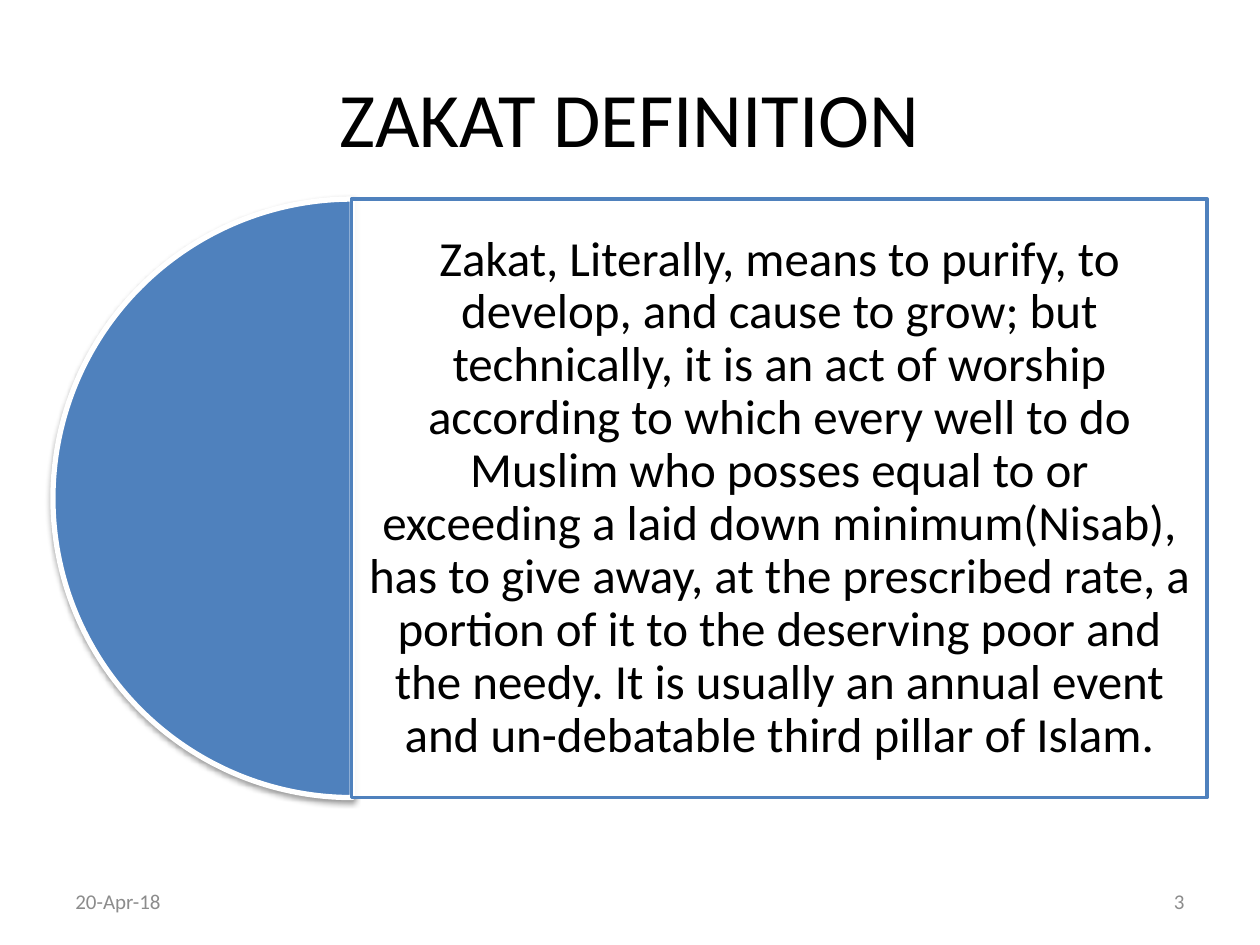
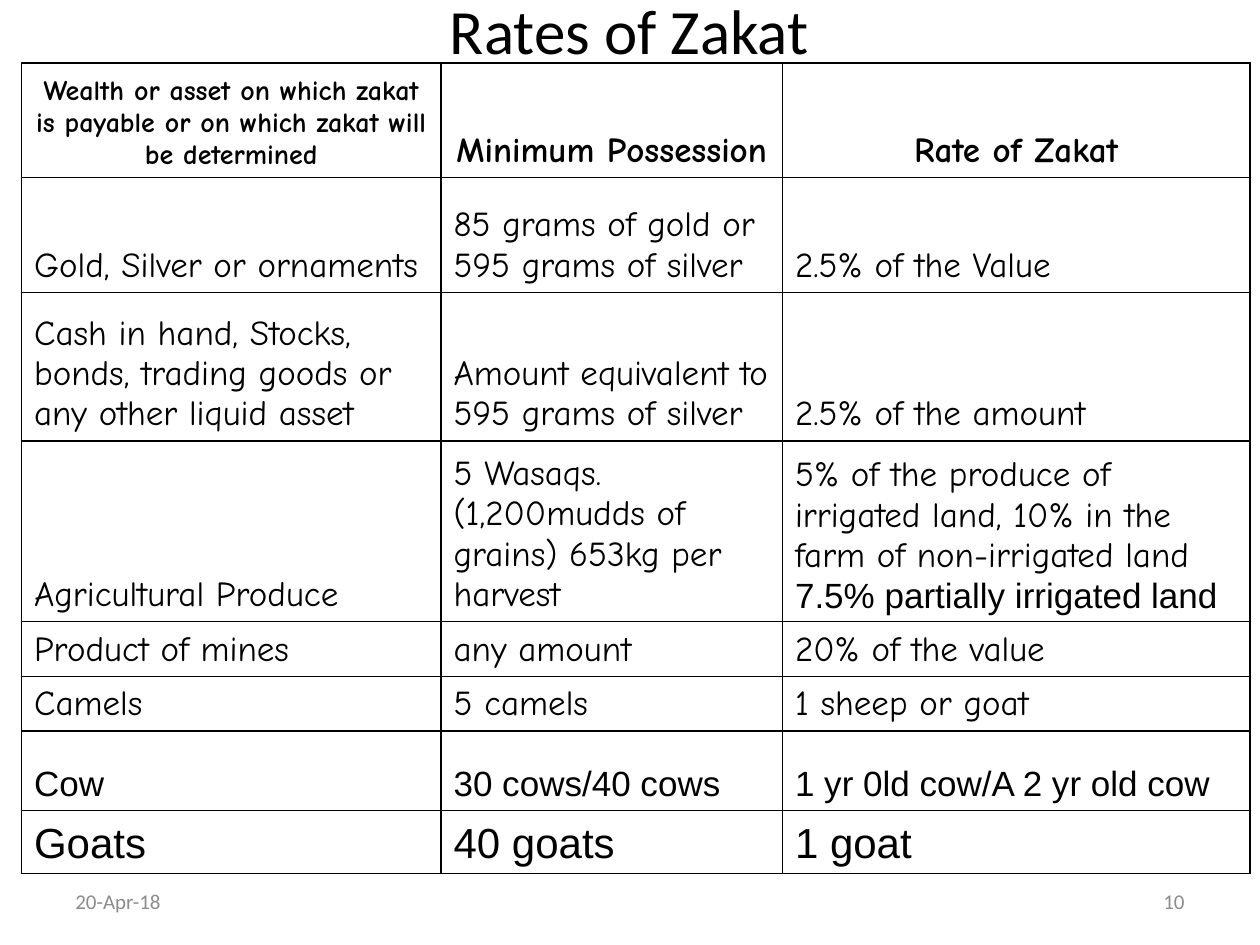
from lxml import etree
from pptx import Presentation
from pptx.dml.color import RGBColor
from pptx.enum.shapes import MSO_SHAPE
from pptx.enum.text import MSO_ANCHOR, PP_ALIGN
from pptx.oxml import parse_xml
from pptx.oxml.ns import nsdecls, qn
from pptx.util import Pt

PX = 9144  # 100 px to the inch
BLACK = RGBColor(0x00, 0x00, 0x00)
WHITE = RGBColor(0xFF, 0xFF, 0xFF)
BLUE = RGBColor(0x4F, 0x81, 0xBD)
GREY = RGBColor(0x8C, 0x8C, 0x8C)
BODY, HAND, PLAIN = "Calibri", "Comic Neue", "Arial"
LEFT, CENTER, RIGHT = PP_ALIGN.LEFT, PP_ALIGN.CENTER, PP_ALIGN.RIGHT
MIDDLE, BOTTOM = MSO_ANCHOR.MIDDLE, MSO_ANCHOR.BOTTOM
PIE, RECTANGLE = MSO_SHAPE.PIE, MSO_SHAPE.RECTANGLE


def style(paragraph, size, font=BODY, color=BLACK, align=LEFT, bold=False):
    paragraph.alignment = align
    paragraph.font.size = Pt(size)
    paragraph.font.name = font
    paragraph.font.color.rgb = color
    paragraph.font.bold = bold


def add_text(slide, box, text, size, color=BLACK, align=LEFT):
    frame = slide.shapes.add_textbox(*[PX * length for length in box]).text_frame
    frame.word_wrap = True
    frame.vertical_anchor = MIDDLE
    frame.text = text
    style(frame.paragraphs[0], size, color=color, align=align)


presentation = Presentation()
presentation.slide_width = 1000 * PX
presentation.slide_height = 750 * PX
blank = presentation.slide_layouts[6]

# Titles and footers of both slides
slides = []
for title, title_box, title_size, number in [
    ("ZAKAT DEFINITION", (50, 30, 900, 125), 44, "3"),
    ("Rates of Zakat", (58, 13, 883, 20), 36, "10"),
]:
    slide = presentation.slides.add_slide(blank)
    add_text(slide, title_box, title, title_size, align=CENTER)
    add_text(slide, (50, 695, 233, 40), "20-Apr-18", 12, GREY)
    add_text(slide, (717, 695, 233, 40), number, 12, GREY, RIGHT)
    slides.append(slide)
definition_slide, rates_slide = slides

# Half disc with a soft shadow
disc = definition_slide.shapes.add_shape(PIE, 42 * PX, 158 * PX, 475 * PX, 475 * PX)
disc.adjustments[0], disc.adjustments[1] = 54, 162
disc.fill.solid()
disc.fill.fore_color.rgb = BLUE
disc.line.color.rgb = WHITE
disc.line.width = Pt(3)
disc.shadow.inherit = False
disc._element.spPr.find(qn("a:effectLst")).append(parse_xml(
    f'<a:outerShdw {nsdecls("a")} blurRad="39400" dist="20300" dir="5400000" rotWithShape="0">'
    '<a:srgbClr val="000000"><a:alpha val="38000"/></a:srgbClr></a:outerShdw>'))

# Definition panel
panel = definition_slide.shapes.add_shape(RECTANGLE, 279 * PX, 158 * PX, 679 * PX, 475 * PX)
panel.shadow.inherit = False
panel.fill.solid()
panel.fill.fore_color.rgb = WHITE
panel_color = panel._element.spPr.find(qn("a:solidFill")).find(qn("a:srgbClr"))
etree.SubElement(panel_color, qn("a:alpha"), val="90000")
panel.line.color.rgb = BLUE
panel.line.width = Pt(2)
frame = panel.text_frame
frame.word_wrap = True
frame.vertical_anchor = MIDDLE
frame.margin_left = frame.margin_right = frame.margin_top = frame.margin_bottom = 12 * PX
frame.text = (
    "Zakat, Literally, means to purify, to develop, and cause to grow; but technically, "
    "it is an act of worship according to which every well to do Muslim who posses equal "
    "to or exceeding a laid down minimum(Nisab), has to give away, at the prescribed rate, "
    "a portion of it to the deserving poor and the needy. It is usually an annual event "
    "and un-debatable third pillar of Islam.")
style(frame.paragraphs[0], 28, align=CENTER)
frame.paragraphs[0].line_spacing = 0.9

# Rates table: row height, font, size, cell texts
column_widths = [333, 271, 371]
rates = [
    (91, HAND, 20, ["Wealth or asset on which zakat is payable or on which zakat will be determined",
                    "Minimum Possession", "Rate of Zakat"]),
    (91, HAND, 20, ["Gold, Silver or ornaments", "85 grams of gold or 595 grams of silver",
                    "2.5% of the Value"]),
    (118, HAND, 20, ["Cash in hand, Stocks, bonds, trading goods or any other liquid asset",
                     "Amount equivalent to 595 grams of silver", "2.5% of the amount"]),
    (138, HAND, 20, ["Agricultural Produce", "5 Wasaqs. (1,200mudds of grains) 653kg per harvest",
                     "5% of the produce of irrigated land, 10% in the farm of non-irrigated land\n"
                     "7.5% partially irrigated land"]),
    (42, HAND, 20, ["Product of mines", "any amount", "20% of the value"]),
    (42, HAND, 20, ["Camels", "5 camels", "1 sheep or goat"]),
    (63, PLAIN, 20, ["Cow", "30 cows/40 cows", "1 yr 0ld cow/A 2 yr old cow"]),
    (48, PLAIN, 24, ["Goats", "40 goats", "1 goat"]),
]
table = rates_slide.shapes.add_table(
    len(rates), len(column_widths), 17 * PX, 50 * PX,
    sum(column_widths) * PX, sum(rate[0] for rate in rates) * PX).table
table.first_row = table.horz_banding = False
for column, width in zip(table.columns, column_widths):
    column.width = width * PX

for row_index, (height, font, size, texts) in enumerate(rates):
    table.rows[row_index].height = height * PX
    header = row_index == 0
    for column_index, text in enumerate(texts):
        cell = table.cell(row_index, column_index)
        cell.text = text
        cell.vertical_anchor = BOTTOM
        for paragraph in cell.text_frame.paragraphs:
            style(paragraph, size, font, align=CENTER if header else LEFT, bold=header)
        # Borders stand before the fill in the cell properties
        properties = cell._tc.get_or_add_tcPr()
        for side in ("lnL", "lnR", "lnT", "lnB"):
            properties.append(parse_xml(
                f'<a:{side} {nsdecls("a")} w="12700"><a:solidFill>'
                f'<a:srgbClr val="{BLACK}"/></a:solidFill></a:{side}>'))
        cell.fill.background()

# Exceptions: the long heading is smaller, the added rate is in the plain font
table.cell(0, 0).text_frame.paragraphs[0].font.size = Pt(16)
table.cell(3, 2).text_frame.paragraphs[1].font.name = PLAIN

presentation.save("out.pptx")
